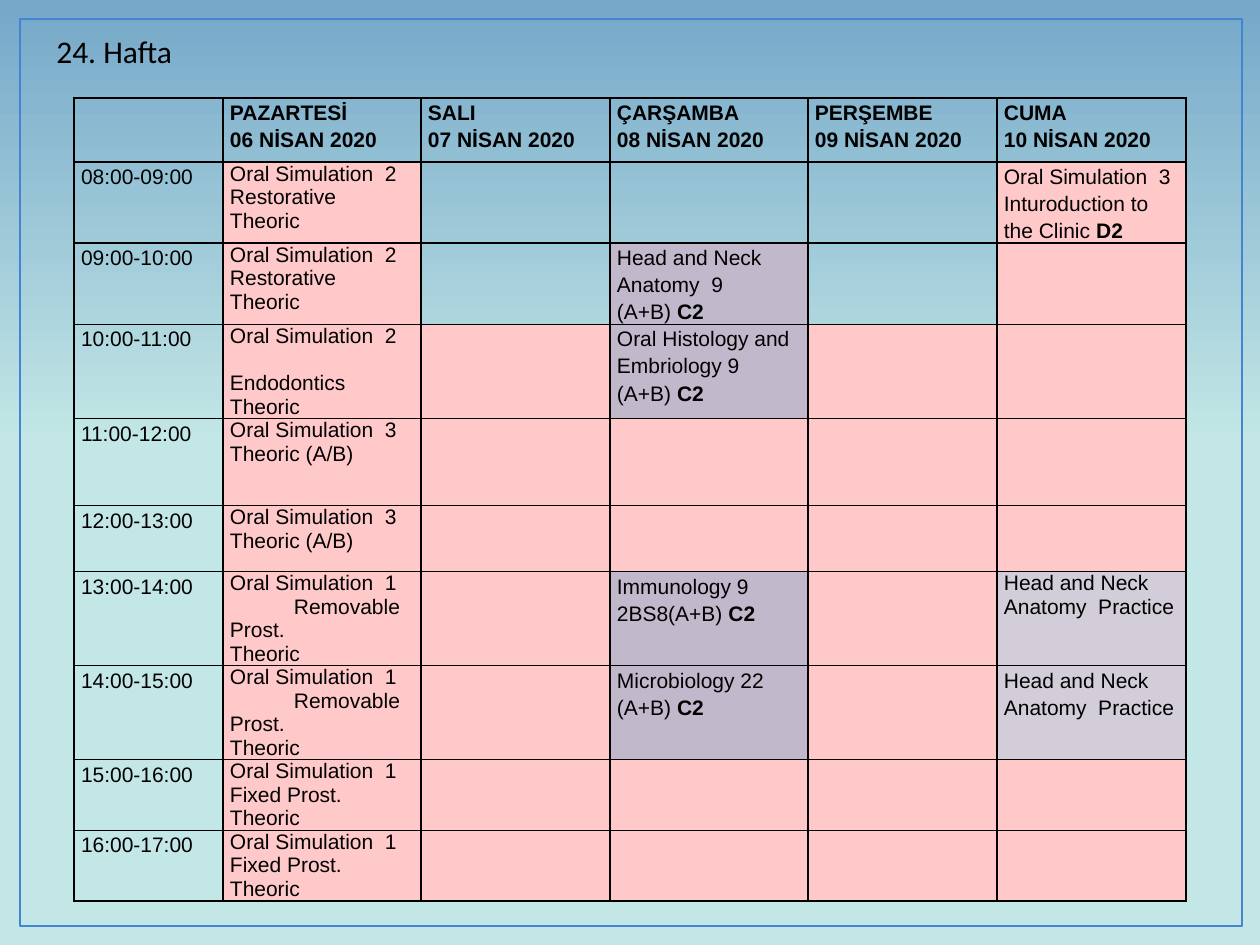
from lxml import etree
from pptx import Presentation
from pptx import util as u
from pptx.dml.color import RGBColor
from pptx.enum import shapes, text
from pptx.oxml.ns import qn

SCALE = u.Inches(1) / 126
BLACK, BLUE, PINK, PURPLE, LILAC = "000000", "4584D3", "FFC9C9", "C1B9CB", "D3CDD9"


def px(length):
    return u.Emu(round(length * SCALE))


def color(hex_code):
    return RGBColor.from_string(hex_code)


class Timetable:
    """Holds the style and the current slide."""
    cell_font, title_font = "Arial", "Calibri"
    cell_size, title_size = u.Pt(12), u.Pt(18)
    loose = 1.15

    def __init__(self, deck):
        self.page = deck.slides.add_slide(deck.slide_layouts[6])

    def background(self, stops, angle):
        fill = self.page.background.fill
        fill.gradient()
        fill.gradient_angle = angle
        for stop, (position, hex_code) in zip(fill.gradient_stops, stops):
            stop.position = position
            stop.color.rgb = color(hex_code)

    def frame(self, left, top, width, height):
        box = self.page.shapes.add_shape(
            shapes.MSO_SHAPE.RECTANGLE, px(left), px(top), px(width), px(height))
        box.shadow.inherit = False
        box.fill.background()
        box.line.color.rgb = color(BLUE)
        box.line.width = u.Pt(1.5)

    def title(self, left, top, width, height, words):
        box = self.page.shapes.add_textbox(px(left), px(top), px(width), px(height))
        box.text_frame.word_wrap = False
        box.text_frame.auto_size = text.MSO_AUTO_SIZE.SHAPE_TO_FIT_TEXT
        para = box.text_frame.paragraphs[0]
        para.text = words
        self.style(para, self.title_font, self.title_size)

    def style(self, para, name, size):
        para.font.name, para.font.size = name, size
        para.font.color.rgb = color(BLACK)

    def table(self, left, top, widths, heights):
        grid = self.page.shapes.add_table(
            len(heights), len(widths), px(left), px(top),
            px(sum(widths)), px(sum(heights))).table
        grid.first_row = grid.horz_banding = False
        for column, width in zip(grid.columns, widths):
            column.width = px(width)
        for row, height in zip(grid.rows, heights):
            row.height = px(height)
        return grid

    def cell(self, cell, lines=(), fill=None, bold=False, tight=False):
        """Each line is plain text, with an optional bold ending after a bar."""
        cell.margin_left = cell.margin_right = px(7)
        cell.margin_top = cell.margin_bottom = 0
        self.borders(cell)
        if fill:
            cell.fill.solid()
            cell.fill.fore_color.rgb = color(fill)
        else:
            cell.fill.background()
        frame = cell.text_frame
        for index, line in enumerate(lines or [""]):
            para = frame.add_paragraph() if index else frame.paragraphs[0]
            self.style(para, self.cell_font, self.cell_size)
            para.font.bold = bold
            para.line_spacing = 1.0 if tight else self.loose
            plain, _, strong = line.partition("|")
            if plain:
                para.add_run().text = plain
            if strong:
                span = para.add_run()
                span.text = strong
                span.font.bold = True

    def borders(self, cell):
        properties = cell._tc.get_or_add_tcPr()
        for side in ("a:lnL", "a:lnR", "a:lnT", "a:lnB"):
            line = etree.SubElement(properties, qn(side), w=str(u.Pt(1)))
            solid = etree.SubElement(line, qn("a:solidFill"))
            etree.SubElement(solid, qn("a:srgbClr"), val=BLACK)


DAYS = ["PAZARTESİ", "SALI", "ÇARŞAMBA", "PERŞEMBE", "CUMA"]
RESTORATIVE = ["Oral Simulation  2 Restorative", "Theoric"]
ENDODONTICS = ["Oral Simulation  2", "Endodontics", "Theoric"]
THEORIC = ["Oral Simulation  3", "Theoric (A/B)"]
REMOVABLE = ["Oral Simulation  1", "Removable Prost.", "Theoric"]
FIXED = ["Oral Simulation  1 Fixed Prost.", "Theoric"]
MONDAY = [RESTORATIVE, RESTORATIVE, ENDODONTICS, THEORIC, THEORIC,
          REMOVABLE, REMOVABLE, FIXED, FIXED]
PRACTICE = ["Head and Neck Anatomy  Practice"]

# Lessons after Monday, by (row, column)
LESSONS = {
    (1, 5): (["Oral Simulation  3 Inturoduction to the Clinic |D2"], PINK),
    (2, 3): (["Head and Neck Anatomy  9", "(A+B) |C2"], PURPLE),
    (3, 3): (["Oral Histology and Embriology 9", "(A+B)| C2"], PURPLE),
    (6, 3): (["Immunology 9", "2BS8(A+B)| C2"], PURPLE),
    (7, 3): (["Microbiology 22", "(A+B)| C2"], PURPLE),
    (6, 5): (PRACTICE, LILAC),
    (7, 5): (PRACTICE, LILAC),
}
CLEAR = {(1, 2), (1, 3), (1, 4), (2, 2), (2, 4)}


def main():
    deck = Presentation()
    deck.slide_width, deck.slide_height = px(1260), px(945)
    week = Timetable(deck)

    # Background and border
    week.background([(0.53, "C3E7E6"), (1.0, "75A8C9")], 90)
    week.frame(20, 19, 1222, 907)

    # Header row
    grid = week.table(74, 98, [149, 198, 189, 198, 189, 189],
                      [64, 81, 73, 76, 87, 66, 64, 64, 64, 64])
    week.cell(grid.cell(0, 0))
    for column, day in enumerate(DAYS, 1):
        week.cell(grid.cell(0, column), [day, f"{column + 5:02} NİSAN 2020"], bold=True)

    # One row per hour
    for row, lines in enumerate(MONDAY, 1):
        week.cell(grid.cell(row, 0), [f"{row + 7:02}:00-{row + 8:02}:00"])
        week.cell(grid.cell(row, 1), lines, PINK, tight=True)
        second = grid.cell(row, 1).text_frame.paragraphs[1]
        if lines is ENDODONTICS:
            second.space_before = u.Pt(13.5)
        elif lines is REMOVABLE:
            second._p.get_or_add_pPr().set("indent", str(px(64)))
        for column in range(2, 6):
            place = row, column
            words, fill = LESSONS.get(place, ([], None if place in CLEAR else PINK))
            week.cell(grid.cell(row, column), words, fill, tight=place == (6, 5))

    # Title
    week.title(44, 26, 150, 50, "24. Hafta")
    deck.save("out.pptx")


if __name__ == "__main__":
    main()
